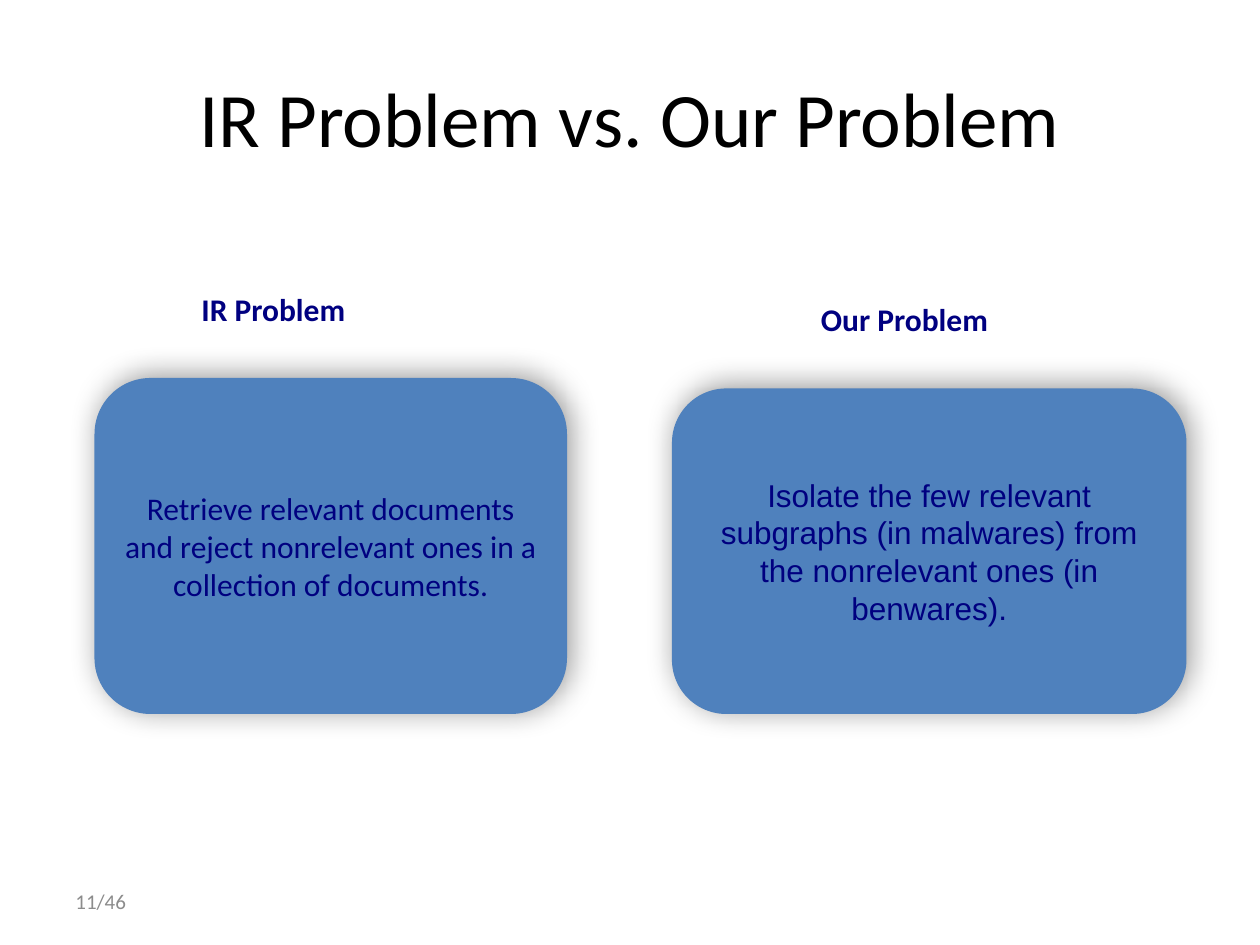
from lxml.etree import SubElement
from pptx import Presentation
from pptx.dml.color import RGBColor
from pptx.enum.shapes import MSO_SHAPE as Shape
from pptx.enum.text import MSO_ANCHOR as Anchor, PP_ALIGN as Align
from pptx.oxml.ns import qn
from pptx.util import Pt

COLORS = {"title": "000000", "card": "4F81BD", "navy": "000080", "gray": "8C8C8C", "shadow": "000000"}


def write(box, text, size, color, font="Calibri", bold=False, align=Align.LEFT, anchor=Anchor.MIDDLE, wrap=True):
    frame = box.text_frame
    frame.word_wrap = wrap
    frame.vertical_anchor = anchor
    para = frame.paragraphs[0]
    para.alignment = align
    span = para.add_run()
    span.text = text
    span.font.size = Pt(size)
    span.font.name = font
    span.font.bold = bold
    span.font.color.rgb = RGBColor.from_string(COLORS[color])


def add_shadow(shape):
    shape.shadow.inherit = False
    effects = shape._element.spPr.find(qn("a:effectLst"))
    shadow = SubElement(effects, qn("a:outerShdw"), blurRad=str(Pt(17)), dist=str(Pt(3)),
                        dir=str(315 * 60000), algn="ctr", rotWithShape="0")
    tint = SubElement(shadow, qn("a:srgbClr"), val=COLORS["shadow"])
    SubElement(tint, qn("a:alpha"), val="40000")


deck = Presentation()
deck.slide_width, deck.slide_height = Pt(720), Pt(540)
page = deck.slides.add_slide(deck.slide_layouts[6])

title = page.shapes.add_textbox(Pt(36), Pt(21.6), Pt(648), Pt(90))
write(title, "IR Problem vs. Our Problem", 44, "title", align=Align.CENTER)

cards = [
    ((54, 216, 270, 192), "Calibri",
     "Retrieve relevant documents and reject nonrelevant ones in a collection of documents."),
    ((384, 222, 294, 186), "Arial",
     "Isolate the few relevant subgraphs (in malwares) from the nonrelevant ones (in benwares)."),
]
for bounds, font, text in cards:
    card = page.shapes.add_shape(Shape.ROUNDED_RECTANGLE, *map(Pt, bounds))
    card.fill.solid()
    card.fill.fore_color.rgb = RGBColor.from_string(COLORS["card"])
    card.line.fill.background()
    add_shadow(card)
    write(card, text, 18, "navy", font, align=Align.CENTER)

headings = [((108, 162, 142.5, 36.5), "IR Problem"), ((462, 168, 161.5, 36.5), "Our Problem")]
for bounds, text in headings:
    heading = page.shapes.add_textbox(*map(Pt, bounds))
    write(heading, text, 18, "navy", bold=True, anchor=Anchor.TOP, wrap=False)

number = page.shapes.add_textbox(Pt(36), Pt(500.5), Pt(168), Pt(28.75))
write(number, "11/46", 12, "gray")

deck.save("out.pptx")
